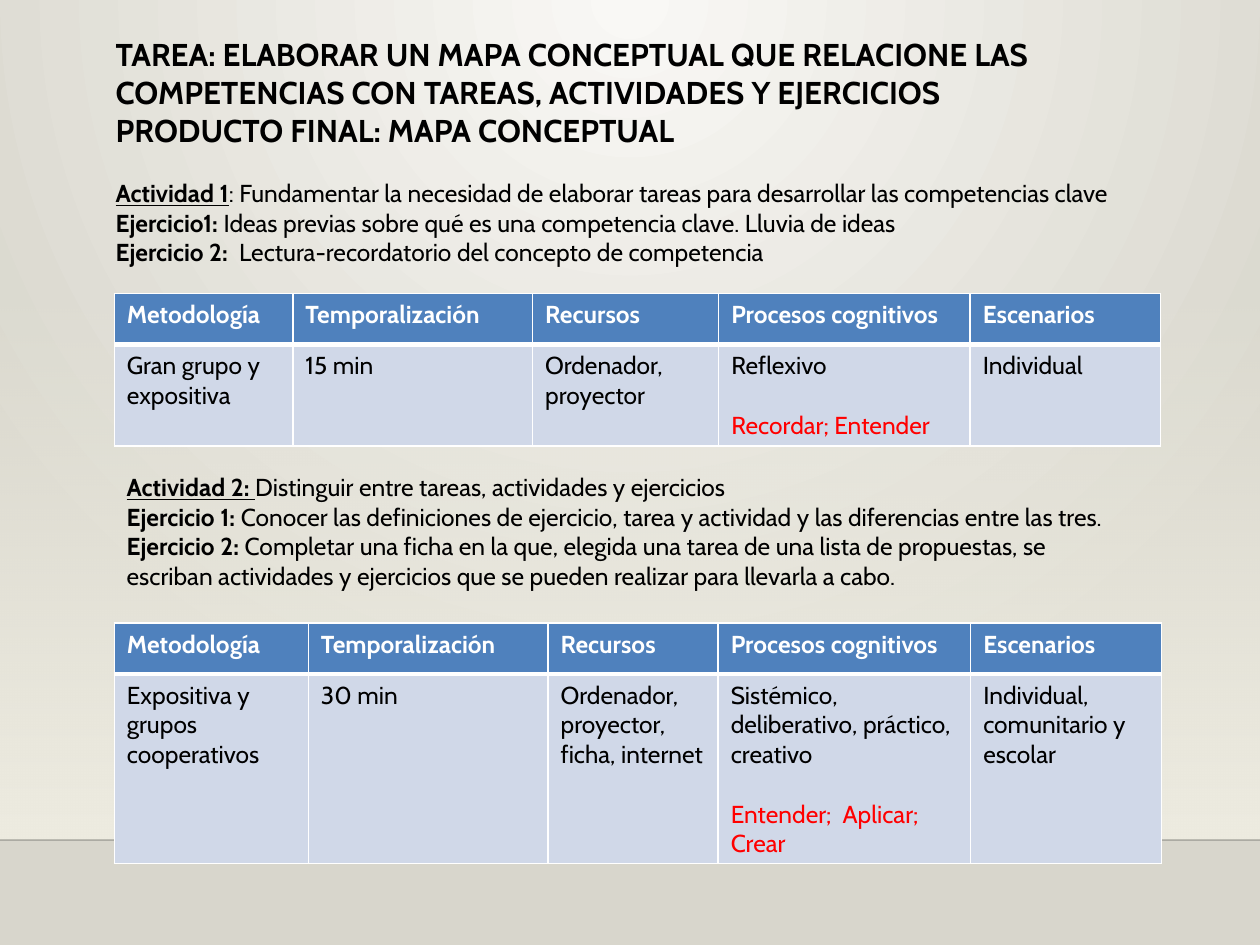
from dataclasses import dataclass

from lxml.etree import SubElement as Sub
from pptx import Presentation
from pptx.dml.color import RGBColor as RGB
from pptx.enum.shapes import MSO_CONNECTOR as Conn, MSO_SHAPE as Shape
from pptx.oxml.ns import qn
from pptx.util import Pt


@dataclass(frozen=True)
class Theme:
    font: str = "Cabin"
    title: int = 18
    body: int = 14
    gap: float = 16.9
    ink: str = "000000"
    white: str = "FFFFFF"
    red: str = "FF0000"
    head: str = "4F81BD"
    cell: str = "D0D8E8"
    glow: str = "F9F8F5"
    edge: str = "D8D6CC"
    haze: str = "EEECE1"


THEME = Theme()
WIDE, HIGH = 720, 540
FLOOR = 480
BOLD = {"bold": True}
UNDER = {"bold": True, "underline": True}
HEADS = ["Metodología", "Temporalización", "Recursos",
         "Procesos cognitivos", "Escenarios"]


def tint(node, color, alpha=100):
    item = Sub(node, qn("a:srgbClr"), val=color)
    if alpha < 100:
        Sub(item, qn("a:alpha"), val=str(alpha * 1000))


def shade(owner, fill, stops):
    """Give a fill new gradient stops and return its gradient element."""
    fill.gradient()
    grad = owner.element.find(".//" + qn("a:gradFill"))
    for child in list(grad):
        grad.remove(child)
    row = Sub(grad, qn("a:gsLst"))
    for pos, color, alpha in stops:
        tint(Sub(row, qn("a:gs"), pos=str(pos * 1000)), color, alpha)
    return grad


def add_scene(slide):
    """Draw the round glow, the haze over it and the floor line."""
    grad = shade(slide, slide.background.fill,
                 [(0, THEME.glow, 100), (100, THEME.edge, 100)])
    way = Sub(grad, qn("a:path"), path="circle")
    Sub(way, qn("a:fillToRect"), l="43000", t="0", r="43000", b="100000")

    top = 158.4
    haze = slide.shapes.add_shape(
        Shape.RECTANGLE, Pt(0), Pt(top), Pt(WIDE), Pt(FLOOR - top))
    haze.shadow.inherit = False
    haze.line.fill.background()
    grad = shade(haze, haze.fill, [(0, THEME.haze, 0), (100, THEME.haze, 100)])
    Sub(grad, qn("a:lin"), ang="5400000", scaled="0")

    line = slide.shapes.add_connector(
        Conn.STRAIGHT, Pt(0), Pt(FLOOR), Pt(WIDE), Pt(FLOOR))
    line.line.width = Pt(1)
    line.line.color.rgb = RGB.from_string(THEME.ink)
    color = line.element.spPr.find(".//" + qn("a:srgbClr"))
    Sub(color, qn("a:alpha"), val="20000")
    Sub(line.element.spPr, qn("a:effectLst"))


def add_run(para, text, color=THEME.ink, size=THEME.body, form=None):
    run = para.add_run()
    run.text = text
    base = {"name": THEME.font, "size": Pt(size), "bold": False}
    for key, value in (base | (form or {})).items():
        setattr(run.font, key, value)
    run.font.color.rgb = RGB.from_string(color)


def add_para(frame, first):
    return frame.paragraphs[0] if first else frame.add_paragraph()


def add_text(slide, box, tasks, titles=()):
    """Write bold titles, then tasks as (label, format, text) lines."""
    frame = slide.shapes.add_textbox(*map(Pt, box)).text_frame
    frame.word_wrap = True
    for i, title in enumerate(titles):
        add_run(add_para(frame, i == 0), title, size=THEME.title, form=BOLD)
    for i, (label, form, text) in enumerate(tasks):
        para = add_para(frame, i == 0 and not titles)
        if i == 0 and titles:
            para.space_before = Pt(THEME.gap)
        add_run(para, label, form=form)
        add_run(para, text)


def set_edges(cell, base):
    props = cell._tc.get_or_add_tcPr()
    sizes = {"a:lnL": 1, "a:lnR": 1, "a:lnT": 1, "a:lnB": base}
    for i, (tag, size) in enumerate(sizes.items()):
        edge = Sub(props, qn(tag), w=str(Pt(size)))
        tint(Sub(edge, qn("a:solidFill")), THEME.white)
        props.insert(i, edge)


def fill_cell(cell, lines, fill, color, form=None, base=1):
    """Fill a cell; any line after the first is set apart in red."""
    cell.fill.solid()
    cell.fill.fore_color.rgb = RGB.from_string(fill)
    set_edges(cell, base)
    for i, text in enumerate(lines):
        para = add_para(cell.text_frame, i == 0)
        if i:
            para.space_before = Pt(THEME.gap)
        add_run(para, text, THEME.red if i else color, form=form)


def add_grid(slide, top, cols, rows, cells):
    table = slide.shapes.add_table(
        2, len(cols), Pt(65.3), Pt(top), Pt(sum(cols)), Pt(sum(rows))).table
    for col, width in zip(table.columns, cols):
        col.width = Pt(width)
    for row, height in zip(table.rows, rows):
        row.height = Pt(height)
    for i, (head, lines) in enumerate(zip(HEADS, cells)):
        fill_cell(table.cell(0, i), [head], THEME.head, THEME.white, BOLD, 3)
        fill_cell(table.cell(1, i), lines, THEME.cell, THEME.ink)


def main():
    deck = Presentation()
    deck.slide_width, deck.slide_height = Pt(WIDE), Pt(HIGH)
    slide = deck.slides.add_slide(deck.slide_layouts[6])
    add_scene(slide)

    add_text(slide, (59, 16.6, 628, 157.7), [
        ("Actividad 1", UNDER, ": Fundamentar la necesidad de elaborar tareas "
         "para desarrollar las competencias clave"),
        ("Ejercicio1: ", BOLD, "Ideas previas sobre qué es una competencia "
         "clave. Lluvia de ideas"),
        ("Ejercicio 2:  ", BOLD,
         "Lectura-recordatorio del concepto de competencia"),
    ], titles=[
        "TAREA: ELABORAR UN MAPA CONCEPTUAL QUE RELACIONE LAS COMPETENCIAS "
        "CON TAREAS, ACTIVIDADES Y EJERCICIOS",
        "PRODUCTO FINAL: MAPA CONCEPTUAL",
    ])
    add_grid(slide, 167.8, [102, 137, 106.4, 143.7, 108.7], [29.2, 57.8], [
        ["Gran grupo y expositiva"], ["15 min"], ["Ordenador, proyector"],
        ["Reflexivo", "Recordar; Entender"], ["Individual"],
    ])

    add_text(slide, (65.3, 266.4, 584.6, 75), [
        ("Actividad 2: ", UNDER,
         "Distinguir entre tareas, actividades y ejercicios"),
        ("Ejercicio 1: ", BOLD, "Conocer las definiciones de ejercicio, tarea "
         "y actividad y las diferencias entre las tres."),
        ("Ejercicio 2:", BOLD, " Completar una ficha en la que, elegida una "
         "tarea de una lista de propuestas, se escriban actividades y "
         "ejercicios que se pueden realizar para llevarla a cabo."),
    ])
    add_grid(slide, 356, [110.9, 137, 97.2, 144.3, 109], [29.2, 107.6], [
        ["Expositiva y grupos cooperativos"], ["30 min"],
        ["Ordenador, proyector, ficha, internet"],
        ["Sistémico, deliberativo, práctico, creativo",
         "Entender;  Aplicar; Crear"],
        ["Individual, comunitario y escolar"],
    ])
    deck.save("out.pptx")


if __name__ == "__main__":
    main()
